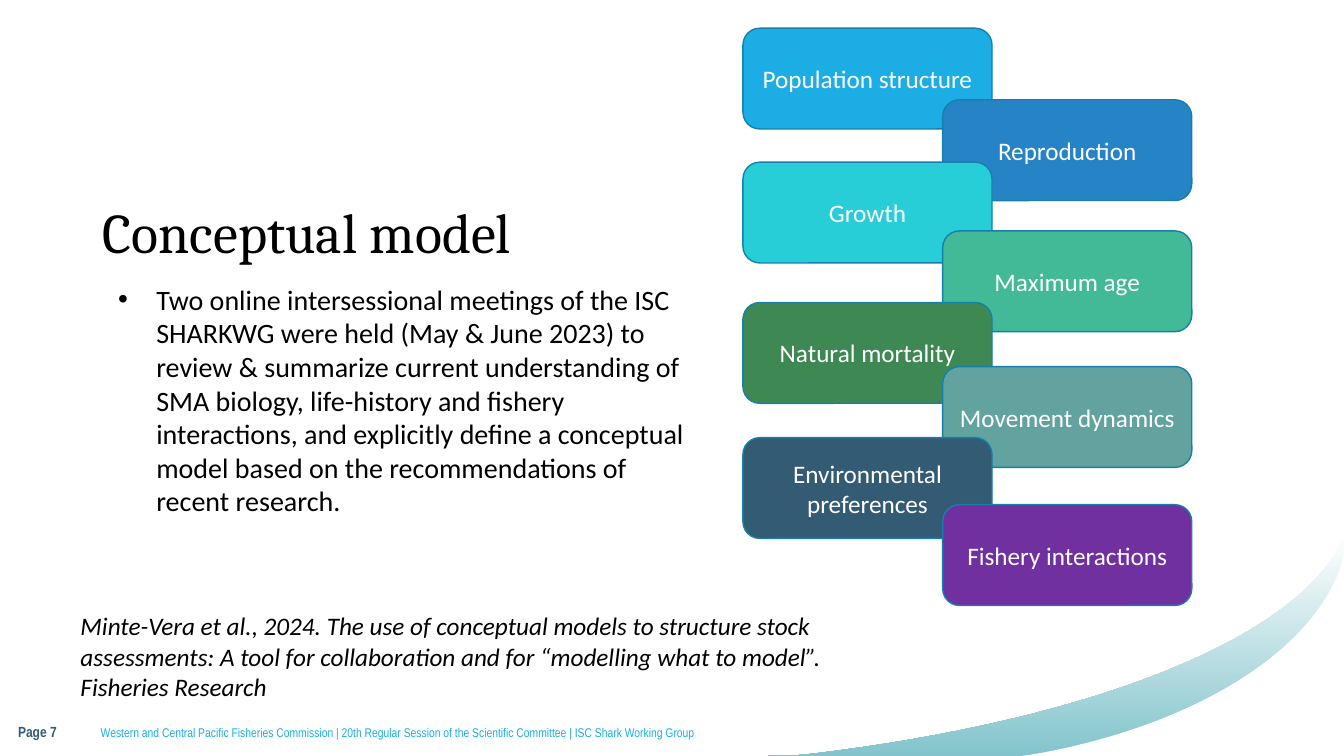
from dataclasses import dataclass

from pptx import Presentation
from pptx.dml.color import RGBColor
from pptx.enum.shapes import MSO_SHAPE as Shape
from pptx.enum.text import MSO_ANCHOR as Anchor, MSO_AUTO_SIZE as AutoSize, PP_ALIGN as Align
from pptx.util import Inches, Pt

BLACK = RGBColor(0x00, 0x00, 0x00)
WHITE = RGBColor(0xFF, 0xFF, 0xFF)
TEAL = RGBColor(0x83, 0xC4, 0xCC)
SKY = RGBColor(0x1C, 0xAD, 0xE4)
BLUE = RGBColor(0x26, 0x83, 0xC6)
AQUA = RGBColor(0x27, 0xCE, 0xD7)
MINT = RGBColor(0x42, 0xBA, 0x97)
GREEN = RGBColor(0x3E, 0x88, 0x53)
SAGE = RGBColor(0x62, 0xA3, 0x9F)
SLATE = RGBColor(0x33, 0x5B, 0x74)
PURPLE = RGBColor(0x70, 0x30, 0xA0)
OUTLINE = RGBColor(0x15, 0x80, 0xA9)

# Topic, fill, and top as a percentage of the stack's height
TOPICS = [
    ("Population structure", SKY, 0),
    ("Reproduction", BLUE, 12.4),
    ("Growth", AQUA, 23.2),
    ("Maximum age", MINT, 35.1),
    ("Natural mortality", GREEN, 47.5),
    ("Movement dynamics", SAGE, 58.6),
    ("Environmental preferences", SLATE, 70.9),
    ("Fishery interactions", PURPLE, 82.5),
]
TOPIC_WIDTH, TOPIC_HEIGHT = 55.5, 17.45

SUMMARY = (
    "Two online intersessional meetings of the ISC SHARKWG were held (May & June 2023) "
    "to review & summarize current understanding of SMA biology, life-history and fishery "
    "interactions, and explicitly define a conceptual model based on the recommendations "
    "of recent research."
)
CITATION = (
    "Minte-Vera et al., 2024. The use of conceptual models to structure stock assessments: "
    "A tool for collaboration and for “modelling what to model”. Fisheries Research"
)
FOOTER = (
    "Western and Central Pacific Fisheries Commission | 20th Regular Session of the "
    "Scientific Committee | ISC Shark Working Group"
)


@dataclass
class Box:
    left: int
    top: int
    width: int
    height: int

    def point(self, x, y):
        """Turn percentages of this box into a position on the page."""
        return int(self.left + self.width * x / 100), int(self.top + self.height * y / 100)

    def inner(self, x, y, width, height):
        """Return the inner box given in percentages of this one."""
        return Box(*self.point(x, y), int(self.width * width / 100), int(self.height * height / 100))

    def place(self, shape):
        shape.left, shape.top, shape.width, shape.height = self.left, self.top, self.width, self.height


def add_span(para, text, size, color, font="Calibri", bold=False, italic=False):
    span = para.add_run()
    span.text = text
    span.font.name, span.font.size = font, Pt(size)
    span.font.bold, span.font.italic = bold, italic
    span.font.color.rgb = color


def add_text(page, box, anchor=Anchor.TOP, margins=None):
    """Add a wrapping text box and return its first paragraph."""
    frame = page.shapes.add_textbox(box.left, box.top, box.width, box.height).text_frame
    frame.word_wrap = True
    frame.vertical_anchor = anchor
    if margins:
        frame.margin_left = frame.margin_right = Inches(margins[0])
        frame.margin_top = frame.margin_bottom = Inches(margins[1])
    return frame.paragraphs[0]


def curve(start, first, second, end, steps=40):
    """Return points along a cubic curve."""
    points = []
    for step in range(steps + 1):
        t = step / steps
        weights = ((1 - t) ** 3, 3 * t * (1 - t) ** 2, 3 * t * t * (1 - t), t ** 3)
        points.append(tuple(
            sum(weight * value for weight, value in zip(weights, values))
            for values in zip(start, first, second, end)
        ))
    return points


def add_outline(page, box, points):
    places = [box.point(*point) for point in points]
    builder = page.shapes.build_freeform(*places[0], scale=1.0)
    builder.add_line_segments(places[1:], close=True)
    shape = builder.convert_to_shape()
    shape.shadow.inherit = False
    shape.line.fill.background()
    return shape


def add_swoosh(page, box):
    outer = curve((98.6, 7.8), (88.6, 50.7), (52.9, 85.4), (6, 99.5))
    inner = curve((99.3, 15.5), (93.7, 54.3), (73.6, 85.8), (47.5, 98.6))
    band = add_outline(page, box, [(0, 100), (100, 100), (100, 0), *outer])
    band.fill.gradient()
    band.fill.gradient_angle = 270
    for stop, color in zip(band.fill.gradient_stops, (WHITE, TEAL)):
        stop.color.rgb = color
    cutout = add_outline(page, box, [(44.1, 100), (100, 100), (100, 8.2), *inner])
    cutout.fill.solid()
    cutout.fill.fore_color.rgb = WHITE


def add_footer(page, box):
    note = add_text(page, box.inner(7.74, 3.28, 92.26, 96.72), Anchor.MIDDLE, (0, 0.05))
    add_span(note, FOOTER, 9, SKY, "Arial Narrow")
    number = add_text(page, box.inner(0, 0, 7.74, 100), Anchor.MIDDLE, (0, 0))
    add_span(number, "Page 7", 10.5, SLATE, "Arial Narrow", bold=True)


def fill_title(page, box):
    title = page.shapes.title
    box.place(title)
    frame = title.text_frame
    frame.auto_size = AutoSize.NONE
    frame.vertical_anchor = Anchor.MIDDLE
    para = frame.paragraphs[0]
    para.alignment = Align.LEFT
    para.line_spacing = 0.9
    add_span(para, "Conceptual model", 40, BLACK, "Cambria")


def fill_summary(page, box):
    body = page.placeholders[1]
    box.place(body)
    frame = body.text_frame
    frame.auto_size = AutoSize.NONE
    para = frame.paragraphs[0]
    para.space_before = Pt(6)
    properties = para._p.get_or_add_pPr()
    properties.set("marL", str(Inches(0.38)))
    properties.set("indent", str(Inches(-0.38)))
    add_span(para, SUMMARY, 20, BLACK)


def add_topics(page, box):
    """Stack overlapping topic cards, alternating left and right."""
    for index, (topic, color, top) in enumerate(TOPICS):
        left = (100 - TOPIC_WIDTH) * (index % 2)
        place = box.inner(left, top, TOPIC_WIDTH, TOPIC_HEIGHT)
        card = page.shapes.add_shape(
            Shape.ROUNDED_RECTANGLE, place.left, place.top, place.width, place.height)
        card.shadow.inherit = False
        card.fill.solid()
        card.fill.fore_color.rgb = color
        card.line.color.rgb = OUTLINE
        card.line.width = Pt(1)
        card.text_frame.word_wrap = True
        card.text_frame.vertical_anchor = Anchor.MIDDLE
        para = card.text_frame.paragraphs[0]
        para.alignment = Align.CENTER
        add_span(para, topic, 18, WHITE)


def add_citation(page, box):
    para = add_text(page, box)
    para.space_before = Pt(6)
    add_span(para, CITATION, 18, BLACK, italic=True)


def main():
    deck = Presentation()
    deck.slide_width, deck.slide_height = Inches(13.33), Inches(7.5)
    page = deck.slides.add_slide(deck.slide_layouts[1])
    whole = Box(0, 0, deck.slide_width, deck.slide_height)
    add_swoosh(page, whole.inner(57.15, 70.8, 42.85, 29.2))
    add_footer(page, whole.inner(1.35, 92.67, 79.45, 8.13))
    fill_title(page, whole.inner(6.9, 21.47, 86.27, 19.33))
    fill_summary(page, whole.inner(8.03, 36.67, 44.04, 43))
    add_topics(page, whole.inner(55.28, 3.73, 33.4, 76.4))
    add_citation(page, whole.inner(5.25, 80.13, 60.17, 13.47))
    deck.save("out.pptx")


if __name__ == "__main__":
    main()
